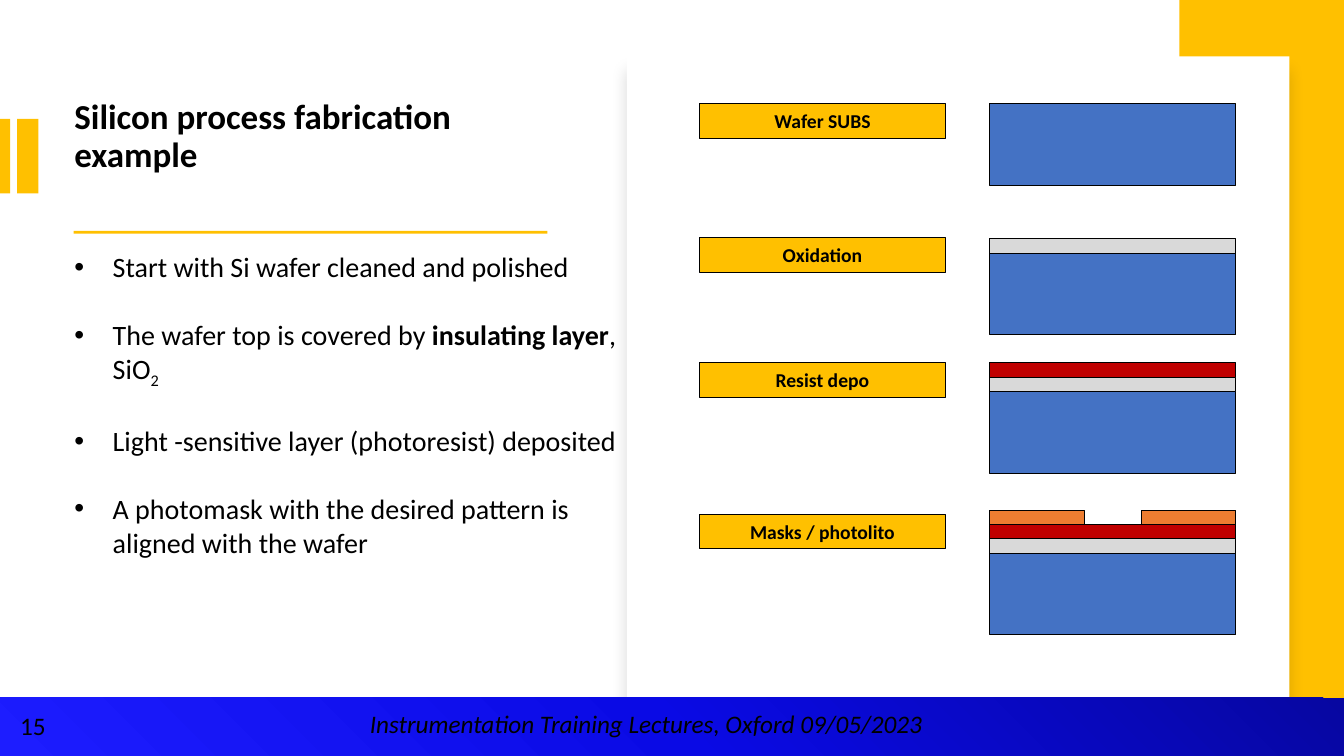
"""Builds the slide on the first steps of silicon process fabrication."""
from lxml import etree
from pptx import Presentation
from pptx.dml.color import RGBColor
from pptx.enum.shapes import MSO_SHAPE
from pptx.enum.text import MSO_ANCHOR, PP_ALIGN
from pptx.oxml.ns import qn
from pptx.util import Inches, Pt

RECTANGLE = MSO_SHAPE.RECTANGLE
TOP, MIDDLE = MSO_ANCHOR.TOP, MSO_ANCHOR.MIDDLE
CENTER = PP_ALIGN.CENTER

FONT = "Calibri"
BLACK, WHITE, YELLOW = "000000", "FFFFFF", "FFC000"
SILICON, OXIDE, RESIST, MASK = "4472C4", "D9D9D9", "C00000", "ED7D31"
FOOTER_STOPS = [(0, "0707A1"), (50, "0A0AE5"), (100, "1D1DFF")]

TITLE = "Silicon process fabrication example"
PAGE = "15"
EVENT = "Instrumentation Training Lectures, Oxford 09/05/2023"
BULLETS = [
    [("Start with Si wafer cleaned and polished", "")],
    [("The wafer top is covered by ", ""), ("insulating layer", "bold"),
     (", SiO", ""), ("2", "subscript")],
    [("Light -sensitive layer (photoresist) deposited", "")],
    [("A photomask with the desired pattern is aligned with the wafer", "")],
]
# Step name, label row, stack row, thin layers from the top down
STEPS = [
    ("Wafer SUBS", 13.73, 13.73, []),
    ("Oxidation", 31.47, 31.6, [OXIDE]),
    ("Resist depo", 48, 48, [RESIST, OXIDE]),
    ("Masks / photolito", 68, 67.47, [MASK, RESIST, OXIDE]),
]

# The grid has 100 columns and 100 rows
SLIDE_W, SLIDE_H = Inches(13.33), Inches(7.5)
LABEL_LEFT, STACK_LEFT, STEP_W = 52.05, 73.65, 18.3
LABEL_H, WAFER_H, LAYER_H, MASK_W = 4.53, 10.8, 1.9, 7.05
ACCENTS = [
    (0, 15.73, 0.75, 9.87),
    (1.28, 15.73, 1.58, 9.87),
    (5.48, 30.53, 35.25, 0.4),
    (87.75, 0, 12.25, 100),
]

deck = Presentation()
deck.slide_width, deck.slide_height = SLIDE_W, SLIDE_H
slide = deck.slides.add_slide(deck.slide_layouts[6])


def rgb(code):
    return RGBColor.from_string(code)


def place(left, top, width, height):
    return (int(left * SLIDE_W / 100), int(top * SLIDE_H / 100),
            int(width * SLIDE_W / 100), int(height * SLIDE_H / 100))


def add_xml(parent, tag, **attributes):
    return etree.SubElement(parent, qn(tag), {k: str(v) for k, v in attributes.items()})


def style(run, size, bold=False, italic=False):
    run.font.name, run.font.size = FONT, Pt(size)
    run.font.bold, run.font.italic = bold, italic
    run.font.color.rgb = rgb(BLACK)


def add_block(area, color, outlined=False):
    block = slide.shapes.add_shape(RECTANGLE, *place(*area))
    block.shadow.inherit = False
    block.fill.solid()
    block.fill.fore_color.rgb = rgb(color)
    if outlined:
        block.line.color.rgb = rgb(BLACK)
        block.line.width = Pt(0.75)
    else:
        block.line.fill.background()
    return block


def add_text(area, text, size, **looks):
    frame = slide.shapes.add_textbox(*place(*area)).text_frame
    frame.word_wrap = True
    frame.vertical_anchor = TOP
    frame.text = text
    for run in frame.paragraphs[0].runs:
        style(run, size, **looks)
    return frame


def add_panel():
    panel = add_block((46.65, 7.47, 49.28, 85.07), WHITE)
    effects = panel.fill._xPr.find(qn("a:effectLst"))
    shadow = add_xml(effects, "a:outerShdw", blurRad=Pt(11), dist=Pt(10),
                     dir=90 * 60000, algn="t", rotWithShape=0)
    add_xml(add_xml(shadow, "a:srgbClr", val=BLACK), "a:alpha", val=15000)


def add_step(name, label_top, stack_top, layers):
    label = add_block((LABEL_LEFT, label_top, STEP_W, LABEL_H), YELLOW, True)
    frame = label.text_frame
    frame.text = name
    frame.vertical_anchor = MIDDLE
    frame.paragraphs[0].alignment = CENTER
    style(frame.paragraphs[0].runs[0], 14, bold=True)

    wafer_top = stack_top + len(layers) * LAYER_H
    add_block((STACK_LEFT, wafer_top, STEP_W, WAFER_H), SILICON, True)
    for depth, color in enumerate(layers):
        top = stack_top + depth * LAYER_H
        spans = [(STACK_LEFT, STEP_W)]
        if color == MASK:
            spans = [(STACK_LEFT, MASK_W), (STACK_LEFT + STEP_W - MASK_W, MASK_W)]
        for left, width in spans:
            add_block((left, top, width, LAYER_H), color, True)


def add_bullets():
    frame = add_text((4.8, 32.4, 44.03, 41.73), "", 20)
    for number, parts in enumerate(BULLETS):
        point = frame.add_paragraph() if number else frame.paragraphs[0]
        point.space_after = Pt(24.4)
        properties = point._p.get_or_add_pPr()
        properties.set("marL", str(Inches(0.38)))
        properties.set("indent", str(-Inches(0.38)))
        add_xml(properties, "a:buFont", typeface="Arial")
        add_xml(properties, "a:buChar", char="•")
        for text, look in parts:
            run = point.add_run()
            run.text = text
            style(run, 20, bold=look == "bold")
            if look == "subscript":
                run.font._element.set("baseline", "-25000")


def add_footer():
    footer = add_block((0, 92.27, 100, 7.73), FOOTER_STOPS[0][1])
    footer.fill.gradient()
    footer.fill.gradient_angle = 225
    stops = footer.fill._xPr.find(qn("a:gradFill")).find(qn("a:gsLst"))
    for stop in list(stops):
        stops.remove(stop)
    for position, color in FOOTER_STOPS:
        add_xml(add_xml(stops, "a:gs", pos=position * 1000), "a:srgbClr", val=color)
    add_text((0.75, 93.33, 5.1, 5.33), PAGE, 18)
    add_text((26.78, 93.07, 50, 5.33), EVENT, 18, italic=True)


def main():
    heading = add_text((4.8, 12.53, 37.43, 16.4), TITLE, 25, bold=True)
    heading.paragraphs[0].line_spacing = 0.9
    for area in ACCENTS:
        add_block(area, YELLOW)
    add_panel()
    for step in STEPS:
        add_step(*step)
    add_bullets()
    add_footer()
    deck.save("out.pptx")


if __name__ == "__main__":
    main()
